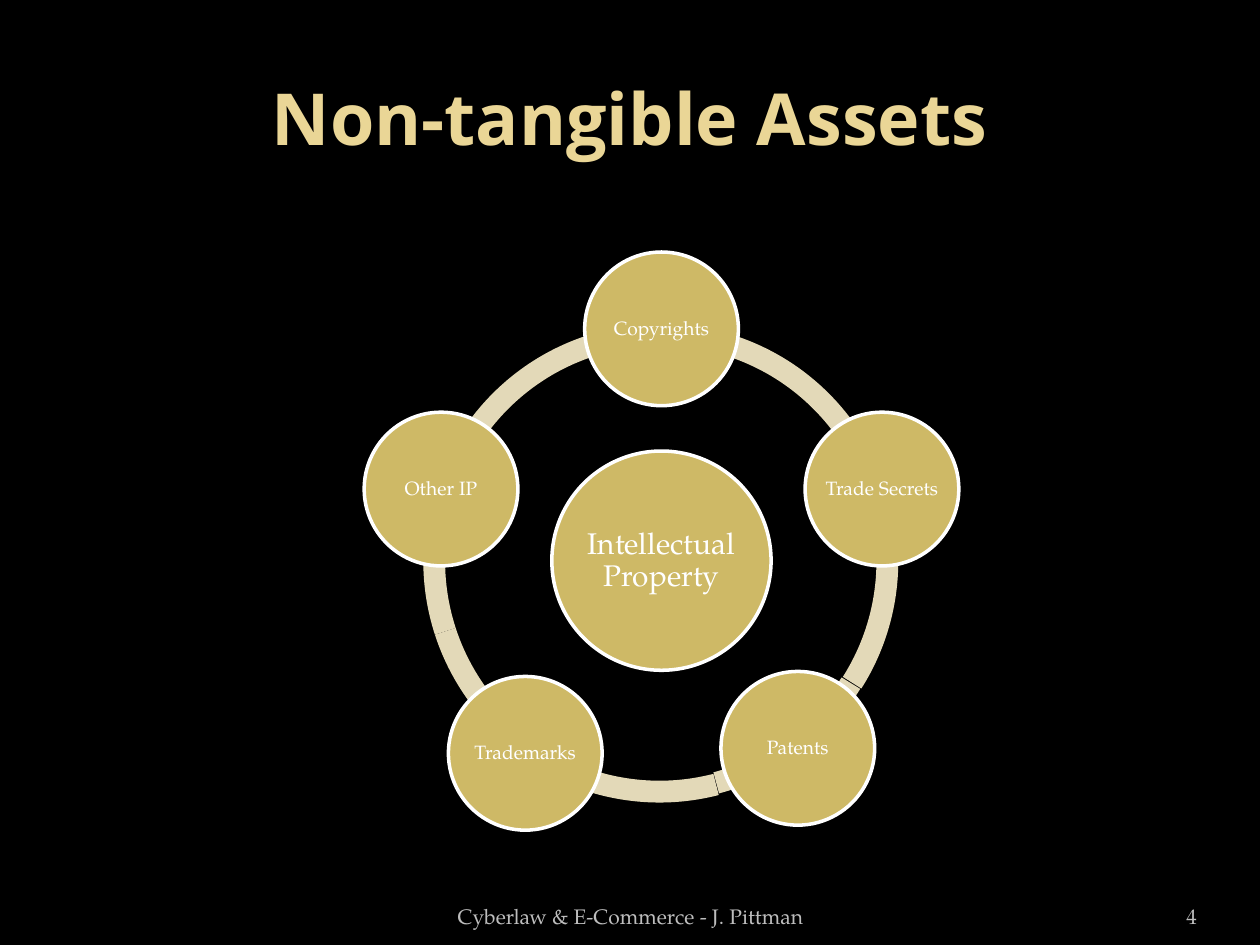
from math import cos, radians, sin

from pptx import Presentation
from pptx.dml.color import RGBColor
from pptx.enum.shapes import MSO_SHAPE
from pptx.enum.text import MSO_ANCHOR, PP_ALIGN
from pptx.util import Inches, Pt

BLACK = RGBColor(0x00, 0x00, 0x00)
WHITE = RGBColor(0xFF, 0xFF, 0xFF)
CREAM = RGBColor(0xEA, 0xD6, 0x96)
GOLD = RGBColor(0xCE, 0xB9, 0x66)
SAND = RGBColor(0xE3, 0xD9, 0xB8)
GREY = RGBColor(0xBD, 0xBD, 0xBD)

HEADING_FONT = "Open Sans"
BODY_FONT = "TeX Gyre Pagella"

COLUMNS, ROWS = 100, 75
CELL = Inches(0.1)

CENTER = (52.5, 44.5)
ORBIT = 18.4
HUB_SIZE, TOPIC_SIZE, RING_SIZE = 17.4, 12.2, 37.7
RING_THICKNESS = 0.046

TOPICS = [
    ("Copyrights", 0),
    ("Trade Secrets", 0),
    ("Patents", 0),
    ("Trademarks", 0.4),
    ("Other IP", 0),
]
ARCS = [
    (118.8, 162, 33.6, 25.7),
    (75.56, 119.42, 33.5, 26),
    (31.78, 75.19, 33.4, 25.9),
    (205.2, 32.4, 33.6, 25.7),
    (162, 205.2, 33.6, 25.7),
]


def cells(*counts):
    return [int(count * CELL) for count in counts]


def write_text(shape, text, size, color, font=BODY_FONT, bold=False,
               align=PP_ALIGN.CENTER, anchor=MSO_ANCHOR.MIDDLE, wrap=True):
    text_frame = shape.text_frame
    text_frame.text = text
    text_frame.word_wrap = wrap
    text_frame.vertical_anchor = anchor
    paragraph = text_frame.paragraphs[0]
    paragraph.alignment = align
    run_font = paragraph.runs[0].font
    run_font.name = font
    run_font.size = Pt(size)
    run_font.bold = bold
    run_font.color.rgb = color


def add_label(slide, box, text, size, color, **style):
    shape = slide.shapes.add_textbox(*cells(*box))
    write_text(shape, text, size, color, **style)
    return shape


def add_arc(slide, start, end, left, top):
    shape = slide.shapes.add_shape(
        MSO_SHAPE.BLOCK_ARC, *cells(left, top, RING_SIZE, RING_SIZE))
    shape.shadow.inherit = False
    shape.adjustments[0] = start * 0.6
    shape.adjustments[1] = end * 0.6
    shape.adjustments[2] = RING_THICKNESS
    shape.fill.solid()
    shape.fill.fore_color.rgb = SAND
    shape.line.fill.background()


def add_circle(slide, center_x, center_y, diameter, text, size, wrap):
    shape = slide.shapes.add_shape(
        MSO_SHAPE.OVAL,
        *cells(center_x - diameter / 2, center_y - diameter / 2, diameter, diameter))
    shape.shadow.inherit = False
    shape.fill.solid()
    shape.fill.fore_color.rgb = GOLD
    shape.line.color.rgb = WHITE
    shape.line.width = Pt(2)
    write_text(shape, text, size, WHITE, wrap=wrap)
    text_frame = shape.text_frame
    text_frame.margin_left = text_frame.margin_right = 0
    text_frame.margin_top = text_frame.margin_bottom = 0
    text_frame.paragraphs[0].line_spacing = 0.9


def add_wheel(slide):
    for arc in ARCS:
        add_arc(slide, *arc)
    center_x, center_y = CENTER
    add_circle(slide, center_x, center_y, HUB_SIZE, "Intellectual Property", 17, True)
    for index, (topic, drop) in enumerate(TOPICS):
        angle = radians(index * 360 / len(TOPICS) - 90)
        add_circle(slide, center_x + ORBIT * cos(angle),
                   center_y + ORBIT * sin(angle) + drop, TOPIC_SIZE, topic, 11, False)


def add_footer(slide):
    add_label(slide, (34.2, 70.2, 31.7, 4), "Cyberlaw & E-Commerce - J. Pittman",
              12, GREY, anchor=MSO_ANCHOR.BOTTOM)
    number = add_label(slide, (86.7, 70.2, 8.3, 4), "4", 12, GREY,
                       align=PP_ALIGN.RIGHT, anchor=MSO_ANCHOR.BOTTOM)
    number.text_frame.margin_left = number.text_frame.margin_right = 0


def main():
    presentation = Presentation()
    presentation.slide_width, presentation.slide_height = cells(COLUMNS, ROWS)
    slide = presentation.slides.add_slide(presentation.slide_layouts[6])
    slide.background.fill.solid()
    slide.background.fill.fore_color.rgb = BLACK
    add_label(slide, (5, 3, 90, 12.5), "Non-tangible Assets", 41, CREAM,
              font=HEADING_FONT, bold=True)
    add_wheel(slide)
    add_footer(slide)
    presentation.save("out.pptx")


if __name__ == "__main__":
    main()
